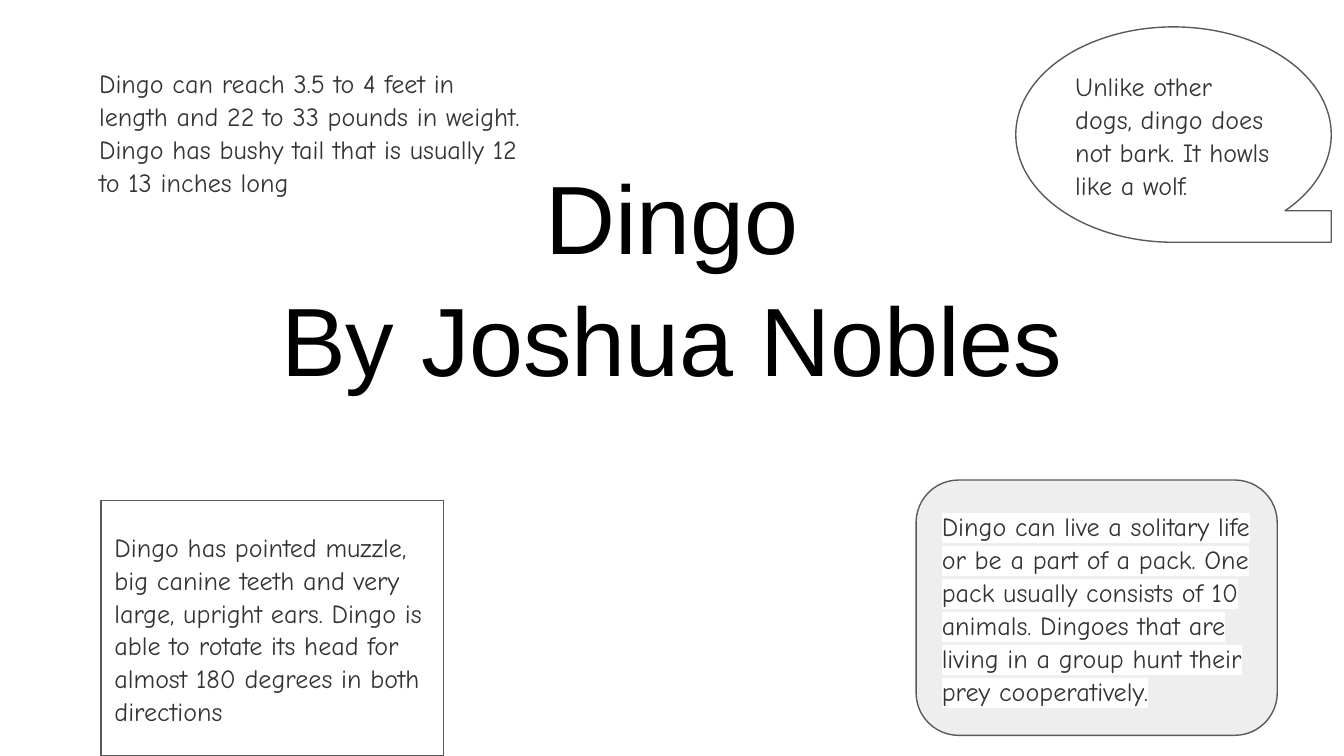
"""Build the dingo fact slide with a centred title and four notes around it."""
from lxml import etree
from pptx import Presentation
from pptx.dml.color import RGBColor
from pptx.enum.shapes import MSO_SHAPE
from pptx.enum.text import MSO_ANCHOR, MSO_AUTO_SIZE, PP_ALIGN
from pptx.oxml.ns import qn
from pptx.util import Pt

TOP, MIDDLE, BOTTOM = MSO_ANCHOR.TOP, MSO_ANCHOR.MIDDLE, MSO_ANCHOR.BOTTOM
LEFT, CENTER = PP_ALIGN.LEFT, PP_ALIGN.CENTER
RECTANGLE = MSO_SHAPE.RECTANGLE
TAPE = MSO_SHAPE.FLOWCHART_SEQUENTIAL_ACCESS_STORAGE
ROUNDED = MSO_SHAPE.ROUNDED_RECTANGLE

THEME = {
    "title_font": "Arial", "title_size": 52, "title_color": "000000",
    "note_font": "Comic Neue", "note_size": 14, "note_color": "333333",
    "highlight": "FFFFFF", "outline": "595959", "panel": "EEEEEE",
    "line_width": 0.75, "inset": 7.2, "spacing": 1.05,
}

PAGE_SIZE = (720, 405)
TITLE = {"lines": ["Dingo", "By Joshua Nobles"], "at": (24.5, 58.3, 671, 161.3)}
NOTES = [
    {"text": "Dingo can reach 3.5 to 4 feet in length and 22 to 33 pounds in weight. "
             "Dingo has bushy tail that is usually 12 to 13 inches long",
     "at": (46, 28, 243.4, 84.2), "shape": None, "fill": None},
    {"text": "Dingo has pointed muzzle, big canine teeth and very large, upright ears. "
             "Dingo is able to rotate its head for almost 180 degrees in both directions",
     "at": (54.2, 268.2, 183.5, 136.8), "shape": RECTANGLE, "fill": None},
    {"text": "Unlike other dogs, dingo does not bark. It howls like a wolf.",
     "at": (544.2, 14.4, 169, 115.4), "shape": TAPE, "fill": None},
    {"text": "Dingo can live a solitary life or be a part of a pack. One pack usually "
             "consists of 10 animals. Dingoes that are living in a group hunt their "
             "prey cooperatively.",
     "at": (490.8, 257.2, 193.5, 136.8), "shape": ROUNDED, "fill": THEME["panel"]},
]


def write_text(shape, lines, *, style, anchor, align=LEFT, highlight=None):
    """Fill a shape with formatted paragraphs."""
    frame = shape.text_frame
    frame.word_wrap = True
    frame.auto_size = MSO_AUTO_SIZE.NONE
    frame.vertical_anchor = anchor
    frame.margin_left = frame.margin_right = Pt(THEME["inset"])
    frame.margin_top = frame.margin_bottom = Pt(THEME["inset"])
    for index, line in enumerate(lines):
        para = frame.add_paragraph() if index else frame.paragraphs[0]
        para.alignment = align
        para.line_spacing = THEME["spacing"]
        span = para.add_run()
        span.text = line
        span.font.size = Pt(THEME[f"{style}_size"])
        span.font.color.rgb = RGBColor.from_string(THEME[f"{style}_color"])
        if highlight:
            marker = etree.SubElement(span.font._element, qn("a:highlight"))
            etree.SubElement(marker, qn("a:srgbClr"), val=highlight)
        span.font.name = THEME[f"{style}_font"]


def add_note(page, note):
    """Add one note as a plain text box or an outlined shape."""
    place = [Pt(value) for value in note["at"]]
    if note["shape"] is None:
        box = page.shapes.add_textbox(*place)
    else:
        box = page.shapes.add_shape(note["shape"], *place)
        box.shadow.inherit = False
        box.line.color.rgb = RGBColor.from_string(THEME["outline"])
        box.line.width = Pt(THEME["line_width"])
        if note["fill"]:
            box.fill.solid()
            box.fill.fore_color.rgb = RGBColor.from_string(note["fill"])
        else:
            box.fill.background()
    write_text(box, [note["text"]], style="note", highlight=THEME["highlight"],
               anchor=MIDDLE if note["shape"] else TOP)


def main():
    """Assemble and save the slide."""
    deck = Presentation()
    deck.slide_width, deck.slide_height = (Pt(side) for side in PAGE_SIZE)
    page = deck.slides.add_slide(deck.slide_layouts.get_by_name("Title Only"))
    title = page.shapes.title
    title.left, title.top, title.width, title.height = (Pt(v) for v in TITLE["at"])
    write_text(title, TITLE["lines"], style="title", anchor=BOTTOM, align=CENTER)
    for note in NOTES:
        add_note(page, note)
    deck.save("out.pptx")


if __name__ == "__main__":
    main()
